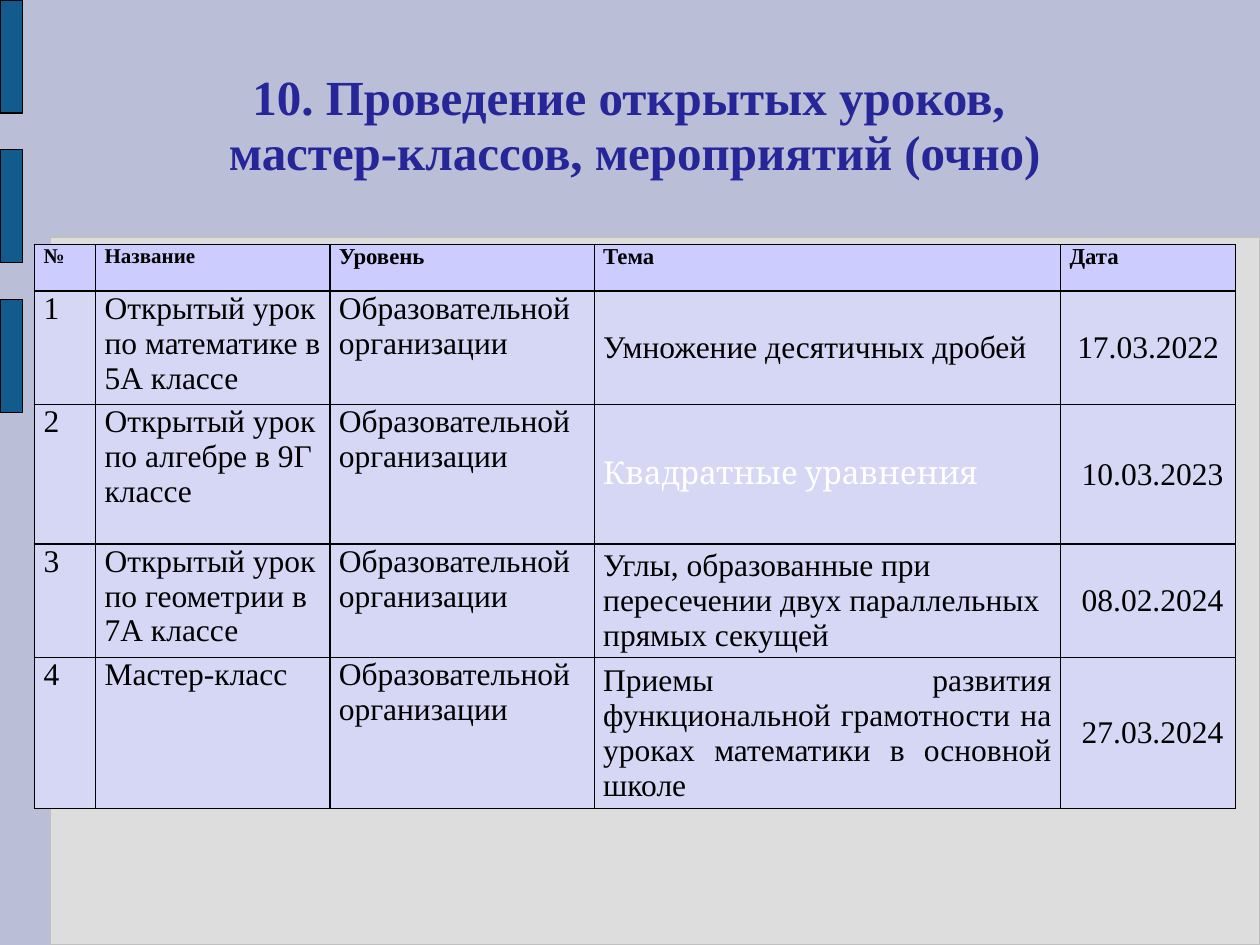
from lxml.etree import SubElement
from pptx import Presentation
from pptx.dml.color import RGBColor
from pptx.enum.shapes import MSO_SHAPE
from pptx.enum.text import MSO_ANCHOR, PP_ALIGN
from pptx.oxml.ns import qn
from pptx.util import Cm, Pt

BACKDROP = RGBColor(0xBA, 0xBE, 0xD6)
PANEL = RGBColor(0xDD, 0xDD, 0xDD)
PANEL_EDGE = RGBColor(0xC0, 0xC0, 0xC0)
TAB = RGBColor(0x12, 0x5C, 0x8D)
TITLE = RGBColor(0x26, 0x26, 0x99)
HEADER = RGBColor(0xCC, 0xCC, 0xFF)
BODY = RGBColor(0xD6, 0xD6, 0xF5)
BLACK = RGBColor(0, 0, 0)
WHITE = RGBColor(0xFF, 0xFF, 0xFF)

SERIF = "Times New Roman"
COLUMN_WIDTHS = [1.23, 4.72, 5.33, 9.4, 3.53]
ROW_HEIGHTS = [0.94, 2.1, 2.81, 2.1, 2.81]
HEADINGS = ["№", "Название", "Уровень", "Тема", "Дата"]
HEADING_SIZES = [12, 12, 13, 13, 13]
LEVEL = "Образовательной организации"
LESSONS = [
    ("Открытый урок по математике в 5А классе",
     "Умножение десятичных дробей", "17.03.2022"),
    ("Открытый урок по алгебре в 9Г классе",
     "Квадратные уравнения", "10.03.2023"),
    ("Открытый урок по геометрии в 7А классе",
     "Углы, образованные при пересечении двух параллельных прямых секущей",
     "08.02.2024"),
    ("Мастер-класс",
     "Приемы развития функциональной грамотности на уроках математики "
     "в основной школе", "27.03.2024"),
]


def apply(target, values):
    for attribute, value in values.items():
        setattr(target, attribute, value)


def write(paragraph, text, color, **font_values):
    paragraph.text = text
    for run in paragraph.runs:
        apply(run.font, {"name": SERIF, **font_values})
        run.font.color.rgb = color


def add_block(slide, left, top, width, height, fill, edge):
    block = slide.shapes.add_shape(
        MSO_SHAPE.ROUNDED_RECTANGLE, Cm(left), Cm(top), Cm(width), Cm(height))
    block.adjustments[0] = 0
    block.shadow.inherit = False
    block.fill.solid()
    block.fill.fore_color.rgb = fill
    block.line.color.rgb = edge
    block.line.width = Pt(0.75)


def add_side_tabs(slide, left, top, width, height, count=3, gap=0.74):
    tab_height = (height - gap * (count - 1)) / count
    for index in range(count):
        add_block(slide, left, top + index * (tab_height + gap),
                  width, tab_height, TAB, BLACK)


def add_title(slide, left, top, width, height):
    frame = slide.shapes.add_textbox(
        Cm(left), Cm(top), Cm(width), Cm(height)).text_frame
    apply(frame, {"word_wrap": True, "vertical_anchor": MSO_ANCHOR.MIDDLE,
                  "margin_left": 0, "margin_right": 0,
                  "margin_top": 0, "margin_bottom": 0})
    heading = frame.paragraphs[0]
    apply(heading, {"alignment": PP_ALIGN.CENTER, "line_spacing": 0.93})
    write(heading,
          "10. Проведение открытых уроков,\v мастер-классов, мероприятий (очно)",
          TITLE, size=Pt(28), bold=True)


def add_borders(cell):
    properties = cell._tc.get_or_add_tcPr()
    for side in ("lnL", "lnR", "lnT", "lnB"):
        border = SubElement(properties, qn(f"a:{side}"), w=str(Pt(1)))
        paint = SubElement(border, qn("a:solidFill"))
        SubElement(paint, qn("a:srgbClr"), val=str(BLACK))


def fill_cell(cell, text, fill, color=BLACK, align=PP_ALIGN.LEFT,
              anchor=MSO_ANCHOR.TOP, **font_values):
    add_borders(cell)
    cell.fill.solid()
    cell.fill.fore_color.rgb = fill
    apply(cell, {"margin_left": Cm(0.18), "margin_right": Cm(0.18),
                 "margin_top": 0, "margin_bottom": 0,
                 "vertical_anchor": anchor})
    paragraph = cell.text_frame.paragraphs[0]
    paragraph.alignment = align
    write(paragraph, text, color, **font_values)


def add_lessons_table(slide, left, top, width, height):
    table = slide.shapes.add_table(
        len(ROW_HEIGHTS), len(COLUMN_WIDTHS),
        Cm(left), Cm(top), Cm(width), Cm(height)).table
    apply(table, {"first_row": False, "horz_banding": False})
    for column, share in zip(table.columns, COLUMN_WIDTHS):
        column.width = Cm(width * share / sum(COLUMN_WIDTHS))
    for row, share in zip(table.rows, ROW_HEIGHTS):
        row.height = Cm(height * share / sum(ROW_HEIGHTS))

    for column, (heading, size) in enumerate(zip(HEADINGS, HEADING_SIZES)):
        fill_cell(table.cell(0, column), heading, HEADER,
                  size=Pt(size), bold=True)

    plain = {"size": Pt(18), "bold": False}
    middle = {**plain, "anchor": MSO_ANCHOR.MIDDLE}
    for number, (event, topic, date) in enumerate(LESSONS, 1):
        for column, text in enumerate((str(number), event, LEVEL)):
            fill_cell(table.cell(number, column), text, BODY, **plain)
        topic_format = {
            2: {"color": WHITE, "name": "Cambria"},
            4: {"align": PP_ALIGN.JUSTIFY},
        }.get(number, {})
        fill_cell(table.cell(number, 3), topic, BODY, **middle, **topic_format)
        date_cell = table.cell(number, 4)
        fill_cell(date_cell, date, BODY, align=PP_ALIGN.CENTER, **middle)
        if number > 1:
            date_line = date_cell.text_frame.paragraphs[0]
            date_line._p.get_or_add_pPr().set("marL", str(Cm(0.18)))


def main():
    deck = Presentation()
    apply(deck, {"slide_width": Cm(25.4), "slide_height": Cm(19.05)})
    slide = deck.slides.add_slide(deck.slide_layouts[6])
    slide.background.fill.solid()
    slide.background.fill.fore_color.rgb = BACKDROP
    add_block(slide, 1.02, 4.78, 24.38, 14.27, PANEL, PANEL_EDGE)
    add_side_tabs(slide, 0, 0, 0.46, 8.31)
    add_title(slide, 1.85, 0.38, 21.64, 4.34)
    add_lessons_table(slide, 0.7, 4.93, 24.21, 10.76)
    deck.save("out.pptx")


if __name__ == "__main__":
    main()
